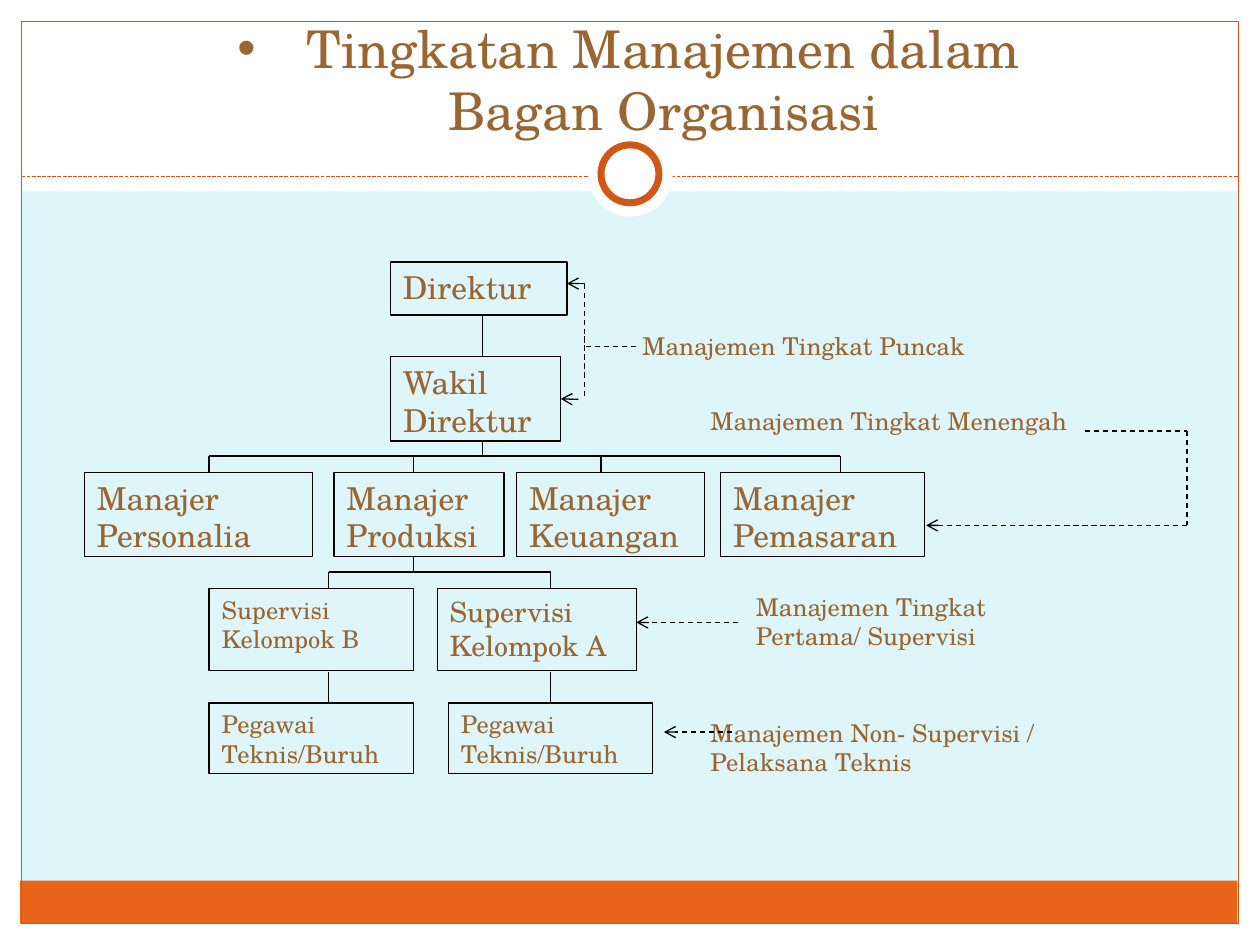
from dataclasses import dataclass

from lxml import etree
from pptx import Presentation
from pptx.dml.color import RGBColor
from pptx.enum import dml, shapes, text
from pptx.oxml import ns
from pptx.util import Inches, Pt


@dataclass(frozen=True)
class Theme:
    font: str = "TeX Gyre Schola"
    sky: str = "DEF5FA"
    white: str = "FFFFFF"
    orange: str = "EB641B"
    rust: str = "CF5818"
    brown: str = "996633"
    black: str = "000000"
    title: float = 29.7
    large: float = 18
    medium: float = 16
    small: float = 14
    hairline: float = 0.75
    ring: float = 4


THEME = Theme()
RECT = shapes.MSO_SHAPE.RECTANGLE
OVAL = shapes.MSO_SHAPE.OVAL
DASH = dml.MSO_LINE.DASH


def color(code):
    return RGBColor.from_string(code)


def style_text(frame, words, size):
    frame.word_wrap = True
    frame.vertical_anchor = text.MSO_ANCHOR.TOP
    frame.text = words
    for paragraph in frame.paragraphs:
        paragraph.alignment = text.PP_ALIGN.LEFT
        paragraph.font.name = THEME.font
        paragraph.font.size = Pt(size)
        paragraph.font.color.rgb = color(THEME.brown)


def add_panel(slide, place, fill=None, line=None, width=THEME.hairline, kind=RECT):
    panel = slide.shapes.add_shape(kind, *map(Inches, place))
    panel.shadow.inherit = False
    if fill:
        panel.fill.solid()
        panel.fill.fore_color.rgb = color(fill)
    else:
        panel.fill.background()
    if line:
        panel.line.color.rgb = color(line)
        panel.line.width = Pt(width)
    else:
        panel.line.fill.background()
    return panel


def add_position(slide, place, words, size):
    position = add_panel(slide, place, line=THEME.black)
    style_text(position.text_frame, words, size)
    return position


def add_label(slide, place, words):
    label = slide.shapes.add_textbox(*map(Inches, place))
    style_text(label.text_frame, words, THEME.small)


def add_line(slide, start, end, dash=None, arrow=False, stroke=THEME.black):
    link = slide.shapes.add_connector(
        shapes.MSO_CONNECTOR.STRAIGHT, *map(Inches, (*start, *end)))
    link.line.color.rgb = color(stroke)
    link.line.width = Pt(THEME.hairline)
    if dash:
        link.line.dash_style = dash
    if arrow:
        etree.SubElement(link.line._get_or_add_ln(), ns.qn("a:tailEnd"), type="arrow")
    etree.SubElement(link._element.spPr, ns.qn("a:effectLst"))
    return link


def add_branch(slide, trunk, top, bar, bottom, branches):
    add_line(slide, (trunk, top), (trunk, bar))
    add_line(slide, (branches[0], bar), (branches[-1], bar))
    for branch in branches:
        add_line(slide, (branch, bar), (branch, bottom))


def add_backdrop(slide):
    slide.background.fill.solid()
    slide.background.fill.fore_color.rgb = color(THEME.sky)
    for margin in ((0, 7.33, 10, 0.17), (0, 0, 10, 1.52),
                   (0, 0, 0.17, 7.5), (9.83, 0, 0.17, 7.5)):
        add_panel(slide, margin, fill=THEME.white)
    add_panel(slide, (0.16, 6.99, 9.66, 0.34), fill=THEME.orange)
    add_panel(slide, (0.17, 0.17, 9.66, 7.16), line=THEME.rust)
    add_line(slide, (0.17, 1.4), (9.83, 1.4),
             dash=dml.MSO_LINE.SQUARE_DOT, stroke=THEME.rust)
    add_panel(slide, (4.67, 1.05, 0.67, 0.67), fill=THEME.white, kind=OVAL)
    add_panel(slide, (4.77, 1.15, 0.46, 0.46), fill=THEME.white,
              line=THEME.rust, width=THEME.ring, kind=OVAL)


def add_title(slide):
    title = slide.shapes.add_textbox(*map(Inches, (0.33, 0.25, 9.33, 0.92)))
    frame = title.text_frame
    frame.text = "Tingkatan Manajemen dalam\vBagan Organisasi"
    properties = frame.paragraphs[0]._p.get_or_add_pPr()
    properties.set("marL", str(Inches(0.55)))
    properties.set("indent", str(Inches(-0.55)))
    etree.SubElement(properties, ns.qn("a:buFont"), typeface="Arial")
    etree.SubElement(properties, ns.qn("a:buChar"), char="•")
    frame.word_wrap = True
    frame.vertical_anchor = text.MSO_ANCHOR.BOTTOM
    heading = frame.paragraphs[0]
    heading.alignment = text.PP_ALIGN.CENTER
    heading.font.name = THEME.font
    heading.font.size = Pt(THEME.title)
    heading.font.color.rgb = color(THEME.brown)


def add_chart_of_positions(slide):
    add_position(slide, (3.1, 2.08, 1.4, 0.42), "Direktur", THEME.large)
    deputy = add_position(slide, (3.1, 2.83, 1.35, 0.67), "Wakil Direktur", THEME.large)
    for left, width, division in ((0.67, 1.81, "Personalia"), (2.65, 1.35, "Produksi"),
                                  (4.1, 1.49, "Keuangan"), (5.72, 1.62, "Pemasaran")):
        add_position(slide, (left, 3.75, width, 0.67), f"Manajer {division}", THEME.large)
    add_position(slide, (1.66, 4.67, 1.62, 0.65), "Supervisi\nKelompok B", THEME.small)
    add_position(slide, (3.47, 4.67, 1.58, 0.65), "Supervisi Kelompok A", THEME.medium)
    for left in (1.66, 3.56):
        add_position(slide, (left, 5.58, 1.62, 0.56), "Pegawai Teknis/Buruh", THEME.small)

    groups = (2.61, 4.37)
    add_line(slide, (3.83, 2.83), (3.83, 2.5))
    add_branch(slide, 3.83, 3.5, 3.62, 3.75, (1.66, 3.28, 4.77, 6.67))
    add_branch(slide, 3.28, 4.42, 4.54, 4.67, groups)
    for group in groups:
        add_line(slide, (group, 5.33), (group, 5.58))
    return deputy


def add_levels(slide, deputy):
    for place, level in (
        ((5, 2.58, 3.16, 0.25), "Manajemen Tingkat Puncak"),
        ((5.54, 3.17, 3.61, 0.33), "Manajemen Tingkat Menengah"),
        ((5.9, 4.65, 2.3, 0.5), "Manajemen Tingkat Pertama/ Supervisi"),
        ((5.54, 5.65, 3.34, 0.5), "Manajemen Non- Supervisi / Pelaksana Teknis"),
    ):
        add_label(slide, place, level)

    for start, end, arrow in (
        ((5.81, 5.81), (5.27, 5.81), True),
        ((5.86, 4.94), (5.05, 4.94), True),
        ((8.61, 3.42), (9.42, 3.42), False),
        ((9.42, 3.42), (9.42, 4.17), False),
        ((9.42, 4.17), (7.35, 4.17), True),
        ((5.05, 2.75), (4.64, 2.75), False),
        ((4.64, 2.25), (4.64, 2.75), False),
        ((4.64, 2.67), (4.64, 3.17), False),
    ):
        add_line(slide, start, end, dash=DASH, arrow=arrow)
    add_line(slide, (4.64, 2.25), (4.5, 2.25), arrow=True)
    to_deputy = add_line(slide, (4.59, 3.17), (4.45, 3.17), arrow=True)
    to_deputy.end_connect(deputy, 3)


def main():
    deck = Presentation()
    deck.slide_width, deck.slide_height = Inches(10), Inches(7.5)
    slide = deck.slides.add_slide(deck.slide_layouts[6])
    add_backdrop(slide)
    add_title(slide)
    deputy = add_chart_of_positions(slide)
    add_levels(slide, deputy)
    deck.save("out.pptx")


if __name__ == "__main__":
    main()
